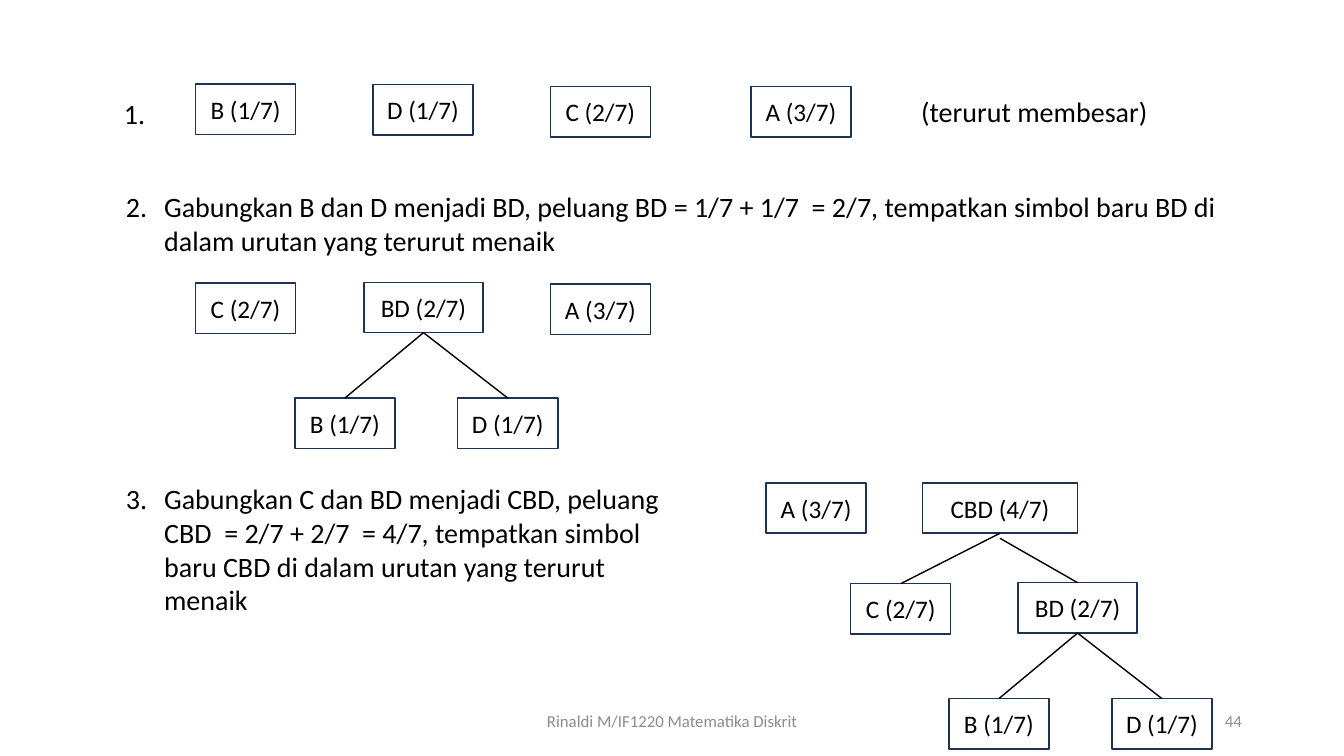
"""Build a slide that shows three steps of Huffman tree making."""
from lxml.etree import SubElement
from pptx import Presentation
from pptx.dml.color import RGBColor as Color
from pptx.enum.shapes import MSO_CONNECTOR as Line, MSO_SHAPE as Shape
from pptx.enum.text import MSO_ANCHOR as Anchor, PP_ALIGN as Align
from pptx.oxml.ns import qn
from pptx.util import Pt

INK, EDGE, GREY = "000000", "1E3256", "8C8C8C"
FONT = "Calibri"
HIGH = 36
HANG = 27.36
WIDE = {1: 71.5, 2: 85, 3: 111}
ODDS = {"A": 3, "B": 1, "C": 2, "D": 1}

ROOTS = [
    ("B", 139.7, 60), ("D", 266.4, 60.5), ("C", 393.1, 61.9), ("A", 536.4, 61.9),
    ("C", 139.7, 202.3), ("BD", 260, 201.6), ("A", 393.1, 203),
    ("A", 547.2, 344.9), ("CBD", 658.8, 344.9),
]
KIDS = {
    "BD": [("B", -49.4, 82.8, 0), ("D", 67, 82.8, 0)],
    "CBD": [("C", -51.1, 72, 0), ("BD", 68.4, 71.3, 3.6)],
}

NOTES = [
    ("1.", 81.4, 65.5, 29.5, 31.5, False),
    ("(terurut membesar)", 650.9, 64.1, 227.5, 31.5, False),
    ("2.\tGabungkan B dan D menjadi BD, peluang BD = 1/7 + 1/7  = 2/7, "
     "tempatkan simbol baru BD di dalam urutan yang terurut menaik",
     82.8, 131.8, 834.5, 55.4, True),
    ("3.\tGabungkan C dan BD menjadi CBD, peluang CBD  = 2/7 + 2/7  = 4/7, "
     "tempatkan simbol baru CBD di dalam urutan yang terurut menaik",
     82.8, 340.6, 421.2, 79.9, True),
]
FOOT = [
    ("Rinaldi M/IF1220 Matematika Diskrit", 318.2, 324, Align.CENTER),
    ("44", 678.2, 216, Align.RIGHT),
]


def paint(code):
    return Color.from_string(code)


def write(shape, text, size, tint, align, anchor):
    frame = shape.text_frame
    frame.text = text
    frame.word_wrap = True
    frame.vertical_anchor = anchor
    para = frame.paragraphs[0]
    para.alignment = align
    for run in para.runs:
        run.font.name, run.font.size = FONT, Pt(size)
        run.font.color.rgb = paint(tint)
    return para


def label(slide, text, x, y, w, h, size, tint, align, anchor):
    box = slide.shapes.add_textbox(Pt(x), Pt(y), Pt(w), Pt(h))
    return write(box, text, size, tint, align, anchor)


def link(slide, top, kid, gap):
    x = top.left + top.width // 2
    y = top.top + top.height + Pt(gap)
    line = slide.shapes.add_connector(
        Line.STRAIGHT, x, y, kid.left + kid.width // 2, kid.top)
    if not gap:
        line.begin_connect(top, 2)
    line.end_connect(kid, 0)
    line.line.color.rgb, line.line.width = paint(INK), Pt(1)
    SubElement(line._element.spPr, qn("a:effectLst"))


def tree(slide, name, x, y):
    box = slide.shapes.add_shape(
        Shape.RECTANGLE, Pt(x), Pt(y), Pt(WIDE[len(name)]), Pt(HIGH))
    box.shadow.inherit = False
    box.fill.background()
    box.line.color.rgb, box.line.width = paint(EDGE), Pt(1)
    text = f"{name} ({sum(ODDS[sign] for sign in name)}/7)"
    write(box, text, 18, INK, Align.CENTER, Anchor.MIDDLE)
    for kid, dx, dy, gap in KIDS.get(name, []):
        link(slide, box, tree(slide, kid, x + dx, y + dy), gap)
    return box


def main():
    deck = Presentation()
    deck.slide_width, deck.slide_height = Pt(960), Pt(540)
    slide = deck.slides.add_slide(deck.slide_layouts[6])
    for text, x, y, w, h, hang in NOTES:
        para = label(slide, text, x, y, w, h, 20, INK, Align.LEFT, Anchor.TOP)
        if hang:
            props = para._p.get_or_add_pPr()
            props.set("marL", str(Pt(HANG)))
            props.set("indent", str(-Pt(HANG)))
    for name, x, y in ROOTS:
        tree(slide, name, x, y)
    for text, x, w, align in FOOT:
        label(slide, text, x, 500.5, w, 28.8, 12, GREY, align, Anchor.MIDDLE)
    deck.save("out.pptx")


if __name__ == "__main__":
    main()
